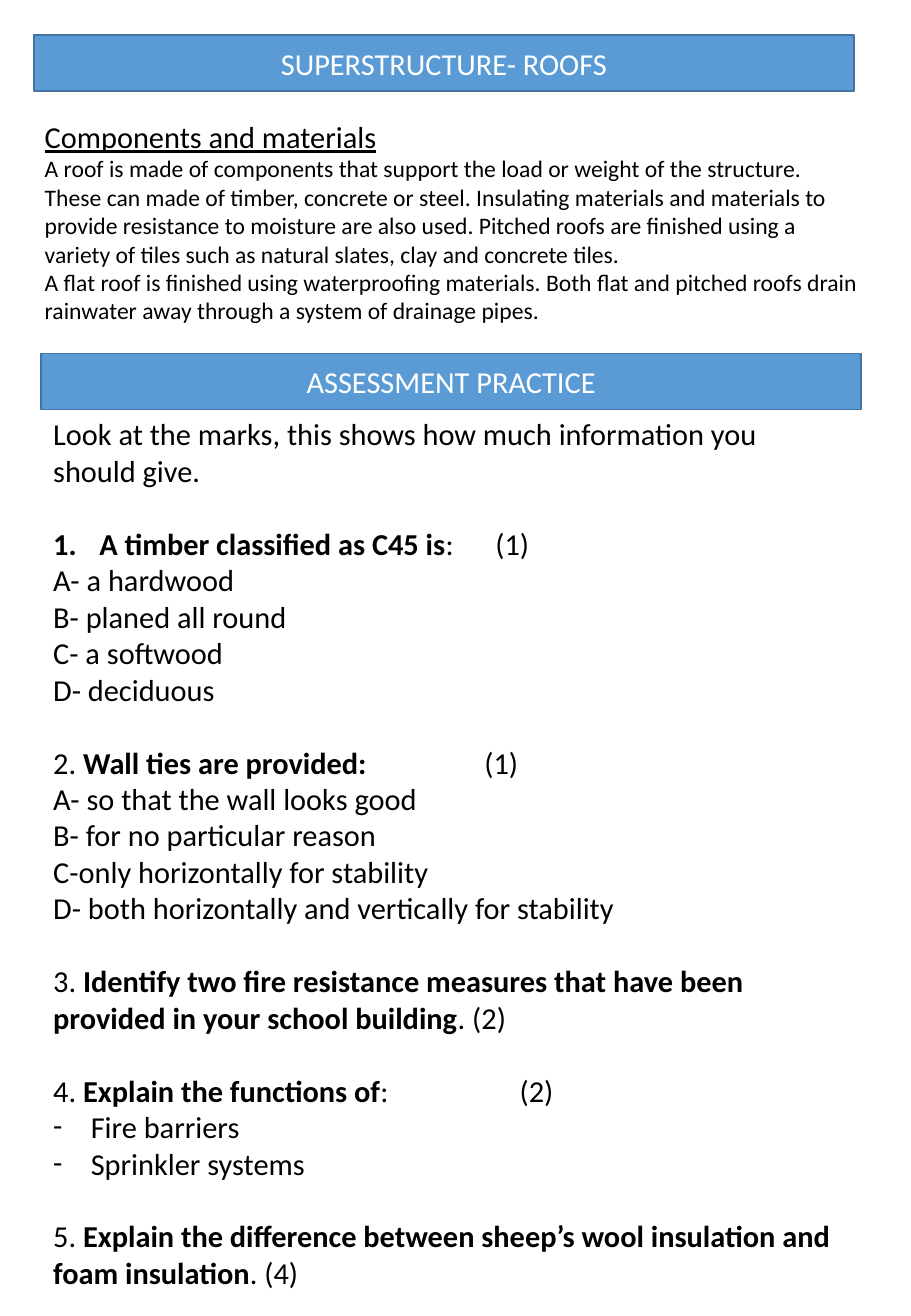
from dataclasses import dataclass

from lxml.etree import SubElement
from pptx import Presentation
from pptx.dml.color import RGBColor
from pptx.enum.shapes import MSO_SHAPE as Shape
from pptx.enum.text import MSO_ANCHOR as Anchor, MSO_AUTO_SIZE as AutoSize, PP_ALIGN as Align
from pptx.oxml.ns import qn
from pptx.util import Inches, Pt


@dataclass
class Theme:
    font: str = "Calibri"
    bar: RGBColor = RGBColor(0x5B, 0x9B, 0xD5)
    edge: RGBColor = RGBColor(0x43, 0x73, 0x9E)
    white: RGBColor = RGBColor(255, 255, 255)
    black: RGBColor = RGBColor(0, 0, 0)
    large: float = 18
    small: float = 14
    gap: float = 21.6


theme = Theme()
deck = Presentation()
deck.slide_width, deck.slide_height = Inches(7.5), Inches(10.83)
page = deck.slides.add_slide(deck.slide_layouts.get_by_name("Title Only"))


def area(left, top, width, height):
    """Turn percentages of the slide's size into lengths."""
    wide, high = deck.slide_width / 100, deck.slide_height / 100
    return int(left * wide), int(top * high), int(width * wide), int(height * high)


def style(span, size=theme.large, color=theme.black, bold=False):
    span.font.name, span.font.size, span.font.bold = theme.font, Pt(size), bold
    span.font.color.rgb = color


# Heading bars
title = page.shapes.title
title.left, title.top, title.width, title.height = area(3.73, 2.68, 90, 4.25)
practice_bar = page.shapes.add_shape(Shape.RECTANGLE, *area(4.53, 26.87, 90, 4.25))
practice_bar.shadow.inherit = False
for bar, heading in ((title, "SUPERSTRUCTURE- ROOFS"), (practice_bar, "ASSESSMENT PRACTICE")):
    bar.fill.solid()
    bar.fill.fore_color.rgb = theme.bar
    bar.line.color.rgb = theme.edge
    bar.line.width = Pt(1)
    frame = bar.text_frame
    frame.text = heading
    frame.auto_size, frame.vertical_anchor = AutoSize.NONE, Anchor.MIDDLE
    frame.paragraphs[0].alignment = Align.CENTER
    style(frame.paragraphs[0].runs[0], color=theme.white)

# Components and materials
intro = page.shapes.add_textbox(*area(3.6, 8.5, 92, 16.8)).text_frame
intro.word_wrap, intro.auto_size = True, AutoSize.SHAPE_TO_FIT_TEXT
intro.text = "\n".join((
    "Components and materials",
    "A roof is made of components that support the load or weight of the structure. "
    "These can made of timber, concrete or steel. Insulating materials and materials to "
    "provide resistance to moisture are also used. Pitched roofs are finished using a "
    "variety of tiles such as natural slates, clay and concrete tiles.",
    "A flat roof is finished using waterproofing materials. Both flat and pitched roofs "
    "drain rainwater away through a system of drainage pipes.",
))
for index, para in enumerate(intro.paragraphs):
    style(para.runs[0], theme.small if index else theme.large)
    para.runs[0].font.underline = index == 0

# Questions: number, bold wording, ending, tab stop of the marks, lines that follow
questions = (
    ("", "A timber classified as C45 is", ":\t(1)", 3.64,
     ("A- a hardwood", "B- planed all round", "C- a softwood", "D- deciduous")),
    ("2. ", "Wall ties are provided:", "\t(1)", 3.55,
     ("A- so that the wall looks good", "B- for no particular reason",
      "C-only horizontally for stability", "D- both horizontally and vertically for stability")),
    ("3. ", "Identify two fire resistance measures that have been provided in your school building",
     ". (2)", None, ()),
    ("4. ", "Explain the functions of", ":\t(2)", 3.84, ("Fire barriers", "Sprinkler systems")),
    ("5. ", "Explain the difference between sheep’s wool insulation and foam insulation",
     ". (4)", None, ()),
)
practice = page.shapes.add_textbox(*area(4.53, 31.12, 89.07, 68.05)).text_frame
practice.word_wrap, practice.auto_size = True, AutoSize.SHAPE_TO_FIT_TEXT
practice.text = "Look at the marks, this shows how much information you should give."
style(practice.paragraphs[0].runs[0])

for number, wording, ending, stop, lines in questions:
    para = practice.add_paragraph()
    para.space_before = Pt(theme.gap)
    for text in filter(None, (number, wording, ending)):
        span = para.add_run()
        span.text = text
        style(span, bold=text == wording)
    settings = para._p.get_or_add_pPr()
    if not number:
        settings.set("marL", str(Inches(0.38)))
        settings.set("indent", str(-Inches(0.38)))
        SubElement(settings, qn("a:buFont"), typeface="+mj-lt")
        SubElement(settings, qn("a:buAutoNum"), type="arabicPeriod")
    if stop:
        tabs = SubElement(settings, qn("a:tabLst"))
        SubElement(tabs, qn("a:tab"), pos=str(Inches(stop)), algn="l")
    for line in lines:
        para = practice.add_paragraph()
        para.text = line
        style(para.runs[0])
        if wording.startswith("Explain"):
            settings = para._p.get_or_add_pPr()
            settings.set("marL", str(Inches(0.31)))
            settings.set("indent", str(-Inches(0.31)))
            SubElement(settings, qn("a:buFont"), typeface=theme.font)
            SubElement(settings, qn("a:buChar"), char="-")

deck.save("out.pptx")
